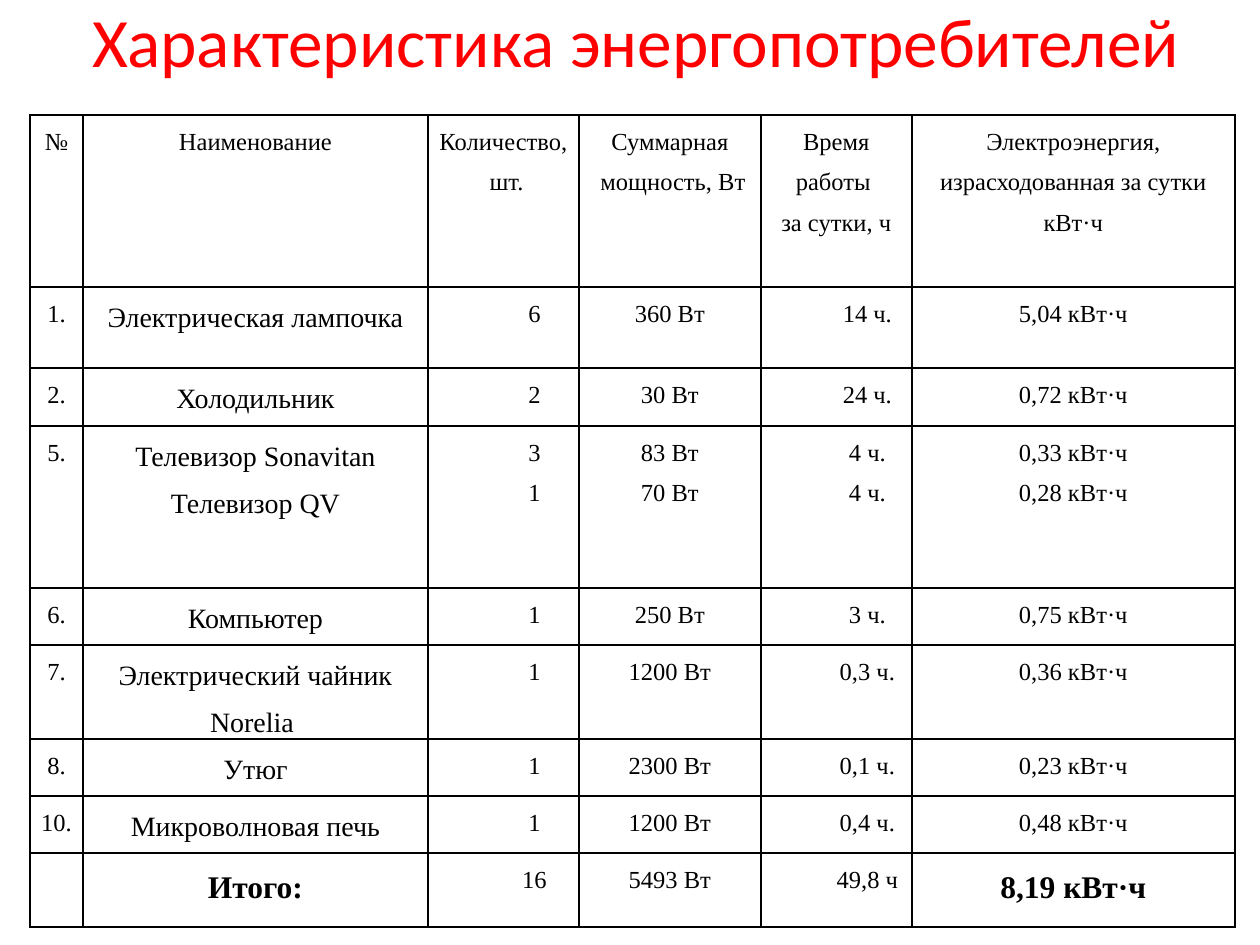
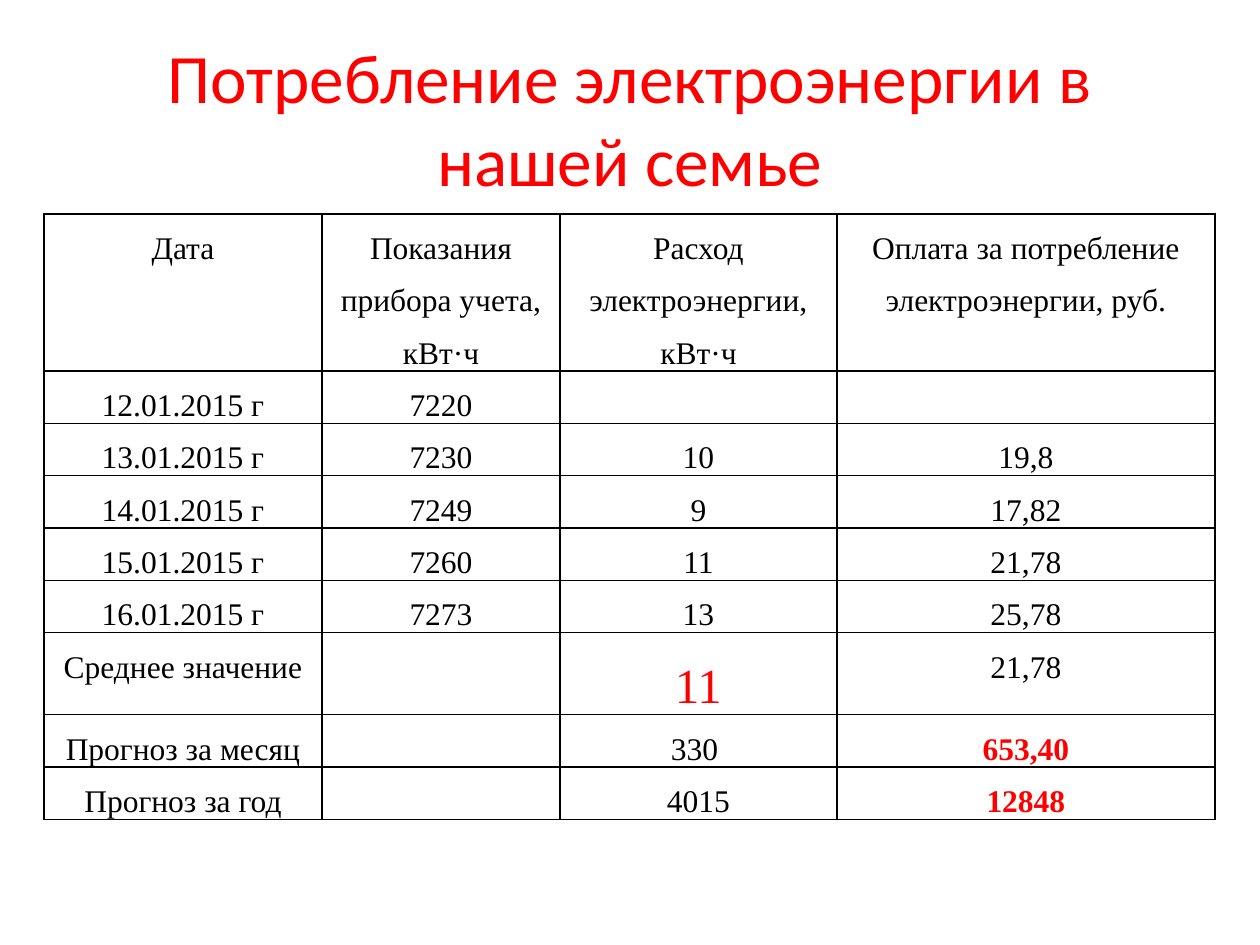
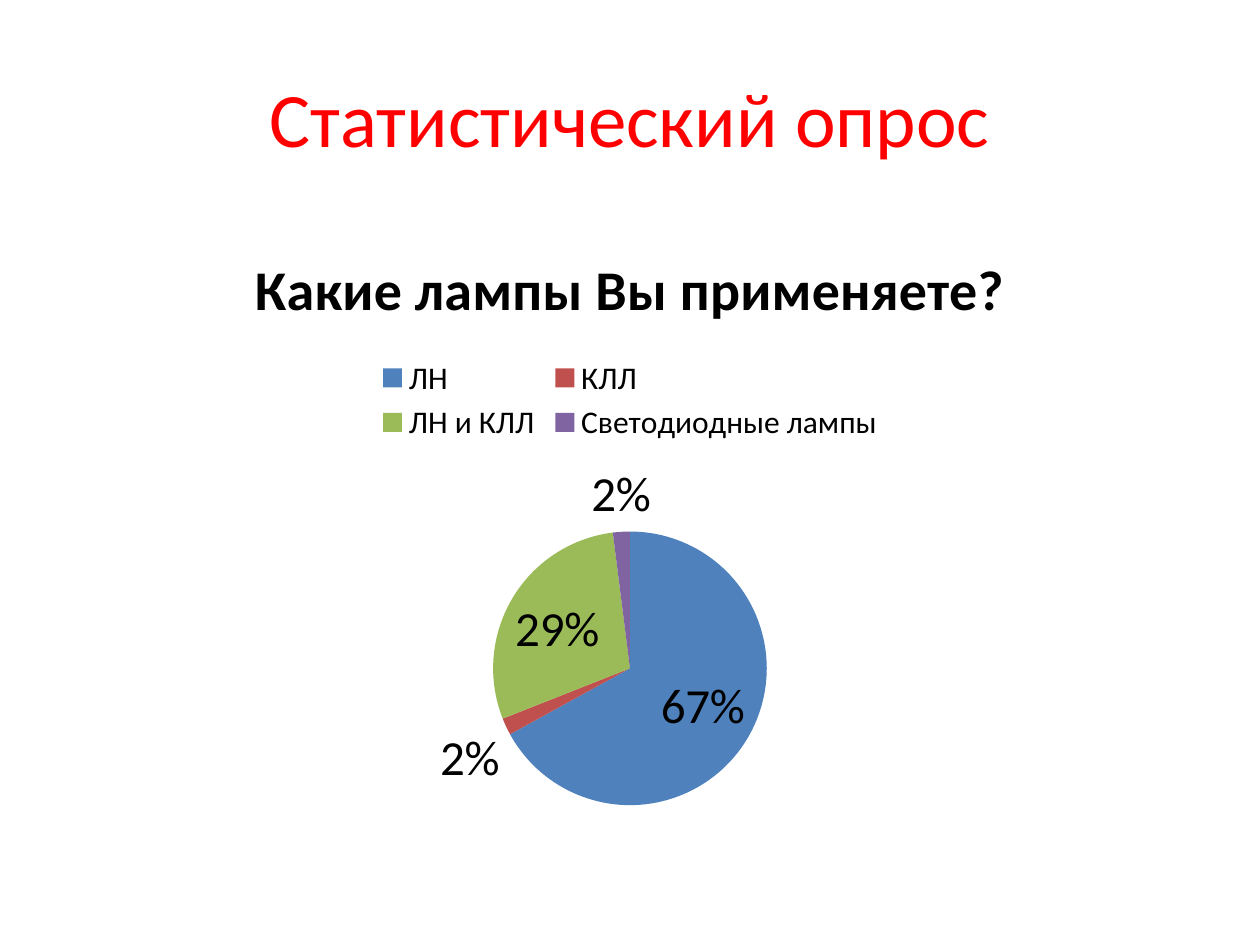
from dataclasses import dataclass

from lxml import etree
from pptx import Presentation
from pptx.chart.data import CategoryChartData
from pptx.dml.color import RGBColor
from pptx.enum.chart import XL_CHART_TYPE, XL_LABEL_POSITION, XL_LEGEND_POSITION
from pptx.enum.text import MSO_ANCHOR, MSO_AUTO_SIZE, PP_ALIGN
from pptx.oxml.ns import qn
from pptx.util import Emu, Pt

CENTER = PP_ALIGN.CENTER
MIDDLE = MSO_ANCHOR.MIDDLE
NO_AUTOFIT = MSO_AUTO_SIZE.NONE
PIE = XL_CHART_TYPE.PIE
BEST_FIT = XL_LABEL_POSITION.BEST_FIT
LEGEND_TOP = XL_LEGEND_POSITION.TOP

PX_PER_INCH = 126
TITLE_ONLY = 5


@dataclass(frozen=True)
class Theme:
    heading_font: str = "Calibri"
    table_font: str = "Times New Roman"
    accent: str = "FF0000"
    ink: str = "000000"
    slices: tuple = ("4F81BD", "C0504D", "9BBB59", "8064A2")
    title_size: float = 44
    long_title_size: float = 39.6
    chart_title_size: float = 32
    large_size: float = 28
    medium_size: float = 18
    name_size: float = 16
    small_size: float = 14
    table_spacing: float = 1.5
    border_width: float = 1


THEME = Theme()


def px(length):
    return Emu(round(length * 914400 / PX_PER_INCH))


def style_font(font, face, size, color, bold=False):
    font.name = face
    font.size = Pt(size)
    font.bold = bold
    font.color.rgb = RGBColor.from_string(color)


def write_text(frame, text, face=THEME.table_font, size=THEME.medium_size,
               color=THEME.ink, bold=False, spacing=1.0, indent=0):
    frame.word_wrap = True
    for index, line in enumerate(text.split("\n")):
        para = frame.add_paragraph() if index else frame.paragraphs[0]
        para.alignment = CENTER
        para.line_spacing = spacing
        if indent:
            properties = para._p.get_or_add_pPr()
            properties.set("marL", "0")
            properties.set("indent", str(px(indent)))
        span = para.add_run()
        span.text = line
        style_font(span.font, face, size, color, bold)


def draw_borders(cell, theme):
    properties = cell._tc.get_or_add_tcPr()
    for position, side in enumerate(("lnL", "lnR", "lnT", "lnB")):
        line = etree.Element(qn("a:" + side), w=str(Pt(theme.border_width)))
        fill = etree.SubElement(line, qn("a:solidFill"))
        etree.SubElement(fill, qn("a:srgbClr"), val=theme.ink)
        properties.insert(position, line)


class DeckBuilder:
    def __init__(self, theme):
        self.theme = theme
        self.deck = Presentation()
        self.deck.slide_width = px(1260)
        self.deck.slide_height = px(945)
        self.slide = None

    def add_slide(self, title, size, left=63, top=38):
        self.slide = self.deck.slides.add_slide(self.deck.slide_layouts[TITLE_ONLY])
        box = self.slide.shapes.title
        box.left, box.top, box.width, box.height = px(left), px(top), px(1134), px(158)
        frame = box.text_frame
        frame.auto_size = NO_AUTOFIT
        frame.vertical_anchor = MIDDLE
        write_text(frame, title, face=self.theme.heading_font, size=size,
                   color=self.theme.accent)

    def add_table(self, left, top, widths, heights, rows, inset, cell_format):
        table = self.slide.shapes.add_table(
            len(rows), len(widths), px(left), px(top),
            px(sum(widths)), px(sum(heights))).table
        table.first_row = False
        table.horz_banding = False
        for column, width in zip(table.columns, widths):
            column.width = px(width)
        for row, height in zip(table.rows, heights):
            row.height = px(height)
        for row_index, texts in enumerate(rows):
            for column_index, text in enumerate(texts):
                cell = table.cell(row_index, column_index)
                cell.margin_left = cell.margin_right = px(inset)
                cell.margin_top = cell.margin_bottom = 0
                cell.fill.background()
                draw_borders(cell, self.theme)
                if text:
                    write_text(cell.text_frame, text, spacing=self.theme.table_spacing,
                               **cell_format(row_index, column_index))

    def add_pie(self, left, top, width, height, title, shares):
        theme = self.theme
        chart_data = CategoryChartData()
        chart_data.categories = list(shares)
        chart_data.add_series(title, list(shares.values()))
        chart = self.slide.shapes.add_chart(
            PIE, px(left), px(top), px(width), px(height), chart_data).chart
        style_font(chart.font, theme.heading_font, theme.medium_size, theme.ink)
        chart.has_title = True
        write_text(chart.chart_title.text_frame, title, face=theme.heading_font,
                   size=theme.chart_title_size, bold=True)
        chart.chart_title.include_in_layout = False
        chart.has_legend = True
        chart.legend.position = LEGEND_TOP
        chart.legend.include_in_layout = False
        plot = chart.plots[0]
        plot.vary_by_categories = True
        for index, color in enumerate(theme.slices):
            fill = plot.series[0].points[index].format.fill
            fill.solid()
            fill.fore_color.rgb = RGBColor.from_string(color)
        plot.has_data_labels = True
        labels = plot.data_labels
        labels.show_percentage = True
        labels.show_value = False
        labels.number_format = "0%"
        labels.number_format_is_linked = False
        labels.position = BEST_FIT
        style_font(labels.font, theme.heading_font, theme.large_size, theme.ink)


CONSUMERS = [
    ("№", "Наименование", "Количество,\n шт.", "Суммарная\n мощность, Вт",
     "Время работы \nза сутки, ч", "Электроэнергия, израсходованная за сутки кВт·ч"),
    ("1.", "Электрическая лампочка", "6", "360 Вт", "14 ч.", "5,04 кВт·ч"),
    ("2.", "Холодильник", "2", "30 Вт", "24 ч.", "0,72 кВт·ч"),
    ("5.", "Телевизор Sonavitan\nТелевизор QV", "3\n1", "83 Вт\n70 Вт",
     "4 ч.\n4 ч.", "0,33 кВт·ч\n0,28 кВт·ч"),
    ("6.", "Компьютер", "1", "250 Вт", "3 ч.", "0,75 кВт·ч"),
    ("7.", "Электрический чайник Norelia ", "1", "1200 Вт", "0,3 ч.", "0,36 кВт·ч"),
    ("8.", "Утюг", "1", "2300 Вт", "0,1 ч.", "0,23 кВт·ч"),
    ("10.", "Микроволновая печь", "1", "1200 Вт", "0,4 ч.", "0,48 кВт·ч"),
    ("", "Итого:", "16", "5493 Вт", "49,8 ч", "8,19 кВт·ч"),
]

READINGS = [
    ("Дата", "Показания прибора учета, кВт·ч", "Расход электроэнергии, кВт·ч",
     "Оплата за потребление электроэнергии, руб."),
    ("12.01.2015 г", "7220", "", ""),
    ("13.01.2015 г", "7230", "10", "19,8"),
    ("14.01.2015 г", "7249", "9", "17,82"),
    ("15.01.2015 г", "7260", "11", "21,78"),
    ("16.01.2015 г", "7273", "13", "25,78"),
    ("Среднее значение", "", "11", "21,78"),
    ("Прогноз за месяц", "", "330 ", "653,40"),
    ("Прогноз за год", "", "4015", "12848"),
]

LAMP_SHARES = {"ЛН": 67, "КЛЛ": 2, "ЛН и КЛЛ": 29, "Светодиодные лампы": 2}


def consumer_format(row, column):
    if row == len(CONSUMERS) - 1 and column in (1, 5):
        return {"size": THEME.medium_size, "bold": True}
    if row and column == 1:
        return {"size": THEME.name_size}
    indent = 62 if row and column in (2, 4) else 0
    return {"size": THEME.small_size, "indent": indent}


def reading_format(row, column):
    if (row, column) == (6, 2):
        return {"size": THEME.large_size, "color": THEME.accent}
    if row > 6 and column == 3:
        return {"color": THEME.accent, "bold": True}
    return {}


def main():
    builder = DeckBuilder(THEME)

    builder.add_slide("Характеристика энергопотребителей", THEME.long_title_size,
                      left=69, top=-39)
    builder.add_table(30, 115, (53, 345, 151, 182, 151, 323),
                      (172, 81, 58, 162, 57, 94, 57, 57, 74),
                      CONSUMERS, 8, consumer_format)

    builder.add_slide("Потребление электроэнергии в нашей семье", THEME.long_title_size)
    builder.add_table(44, 214, (278, 238, 277, 378),
                      (157, *[52] * 5, 82, 52, 52),
                      READINGS, 9, reading_format)

    builder.add_slide("Статистический опрос", THEME.title_size)
    builder.add_pie(63, 221, 1134, 624, "Какие лампы Вы применяете?", LAMP_SHARES)

    builder.deck.save("out.pptx")


if __name__ == "__main__":
    main()
